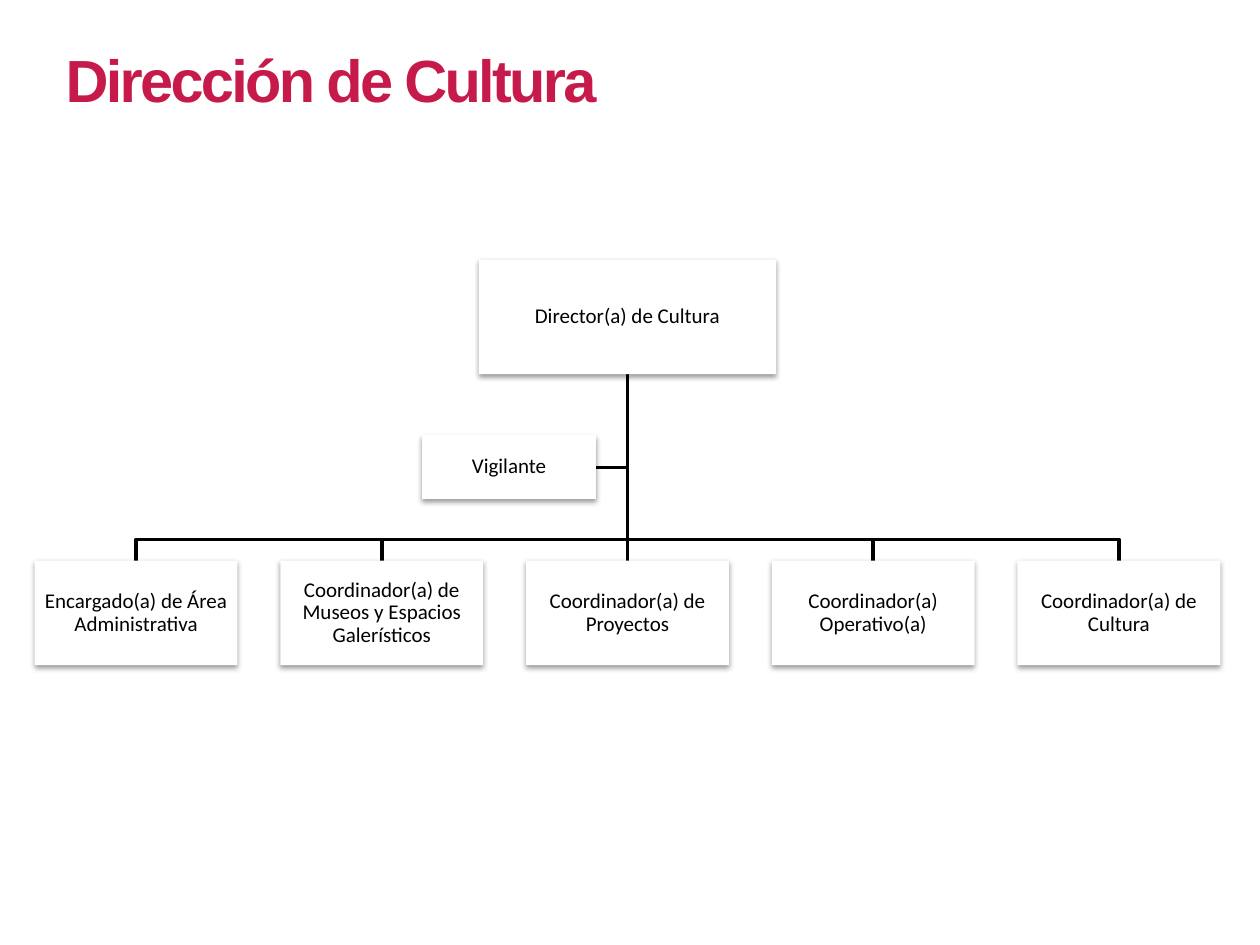
"""Build the organisation chart of the Dirección de Cultura."""
from lxml import etree
from pptx import Presentation
from pptx import util as u
from pptx.dml.color import RGBColor
from pptx.enum import shapes, text
from pptx.oxml.ns import qn

CENTRE = 4.98
DIRECTOR_BOTTOM = 2.97
STAFF_Y = 3.71
BUS_Y = 4.28
TEAM_TOP = 4.45
TEAM_WIDTH = 1.61
TEAM_PITCH = 1.95
TEAM = [
    "Encargado(a) de Área Administrativa",
    "Coordinador(a) de Museos y Espacios Galerísticos",
    "Coordinador(a) de Proyectos",
    "Coordinador(a) Operativo(a)",
    "Coordinador(a) de Cultura",
]


def colour(value):
    """Return the colour for a hex string."""
    return RGBColor.from_string(value)


def write(frame, words, font="Calibri", size=12, ink="000000", bold=False,
          align=text.PP_ALIGN.CENTER, anchor=text.MSO_ANCHOR.MIDDLE,
          leading=0.9, spacing=None):
    """Put one formatted paragraph in a text frame."""
    frame.word_wrap = True
    frame.vertical_anchor = anchor
    para = frame.paragraphs[0]
    para.alignment = align
    para.line_spacing = leading
    span = para.add_run()
    span.text = words
    span.font.name = font
    span.font.size = u.Pt(size)
    span.font.bold = bold
    span.font.color.rgb = colour(ink)
    if spacing is not None:
        span.font._element.set("spc", str(round(spacing * 100)))


def add_title(page, words):
    """Move and format the title placeholder."""
    title = page.shapes.title
    title.left, title.top = u.Inches(0.42), u.Inches(0.29)
    title.width, title.height = u.Inches(6.81), u.Inches(0.69)
    write(title.text_frame, words, font="Arial", size=34, ink="C51A4A", bold=True,
          align=text.PP_ALIGN.LEFT, anchor=text.MSO_ANCHOR.TOP,
          leading=1.0, spacing=-1.5)


def add_shadow(box):
    """Give a box a soft shadow below it."""
    box.shadow.inherit = False
    effects = box._element.spPr.find(qn("a:effectLst"))
    shadow = etree.SubElement(effects, qn("a:outerShdw"), blurRad=str(u.Pt(3.1)),
                              dist=str(u.Pt(1.6)), dir="5400000", rotWithShape="0")
    tint = etree.SubElement(shadow, qn("a:srgbClr"), val="000000")
    etree.SubElement(tint, qn("a:alpha"), val="38000")


def add_post(page, words, left, top, width, height):
    """Add a white box that names a post."""
    box = page.shapes.add_shape(shapes.MSO_SHAPE.RECTANGLE, u.Inches(left),
                                u.Inches(top), u.Inches(width), u.Inches(height))
    box.fill.solid()
    box.fill.fore_color.rgb = colour("FFFFFF")
    box.line.fill.background()
    add_shadow(box)
    frame = box.text_frame
    frame.margin_left = frame.margin_right = u.Inches(0.01)
    frame.margin_top = frame.margin_bottom = u.Inches(0.01)
    write(frame, words)
    return box


def style_line(line):
    """Draw a line in solid black."""
    line.color.rgb = colour("000000")
    line.width = u.Pt(2)


def add_branch(page, *points):
    """Add an open bent line through points given in inches."""
    start, *rest = [(u.Inches(x), u.Inches(y)) for x, y in points]
    builder = page.shapes.build_freeform(*start)
    builder.add_line_segments(rest, close=False)
    branch = builder.convert_to_shape()
    branch.fill.background()
    branch.shadow.inherit = False
    style_line(branch.line)


def add_trunk(page):
    """Add the straight line from the director to the middle post."""
    trunk = page.shapes.add_connector(
        shapes.MSO_CONNECTOR.STRAIGHT, u.Inches(CENTRE), u.Inches(DIRECTOR_BOTTOM),
        u.Inches(CENTRE), u.Inches(TEAM_TOP))
    etree.SubElement(trunk._element.spPr, qn("a:effectLst"))
    style_line(trunk.line)
    return trunk


def main():
    """Build and save the deck."""
    deck = Presentation()
    deck.slide_width, deck.slide_height = u.Inches(10), u.Inches(7.5)
    page = deck.slides.add_slide(deck.slide_layouts[5])
    add_title(page, "Dirección de Cultura")

    middle = len(TEAM) // 2
    centres = [CENTRE + (i - middle) * TEAM_PITCH for i in range(len(TEAM))]
    start = (CENTRE, DIRECTOR_BOTTOM)
    add_branch(page, start, (CENTRE, STAFF_Y), (4.73, STAFF_Y))
    for i, x in enumerate(centres):
        if i != middle:
            add_branch(page, start, (CENTRE, BUS_Y), (x, BUS_Y), (x, TEAM_TOP))
    trunk = add_trunk(page)

    director = add_post(page, "Director(a) de Cultura", 3.8, 2.06, 2.36, 0.91)
    team = [add_post(page, words, x - TEAM_WIDTH / 2, TEAM_TOP, TEAM_WIDTH, 0.83)
            for words, x in zip(TEAM, centres)]
    add_post(page, "Vigilante", 3.35, 3.45, 1.38, 0.51)
    trunk.begin_connect(director, 2)
    trunk.end_connect(team[middle], 0)
    deck.save("out.pptx")


if __name__ == "__main__":
    main()
